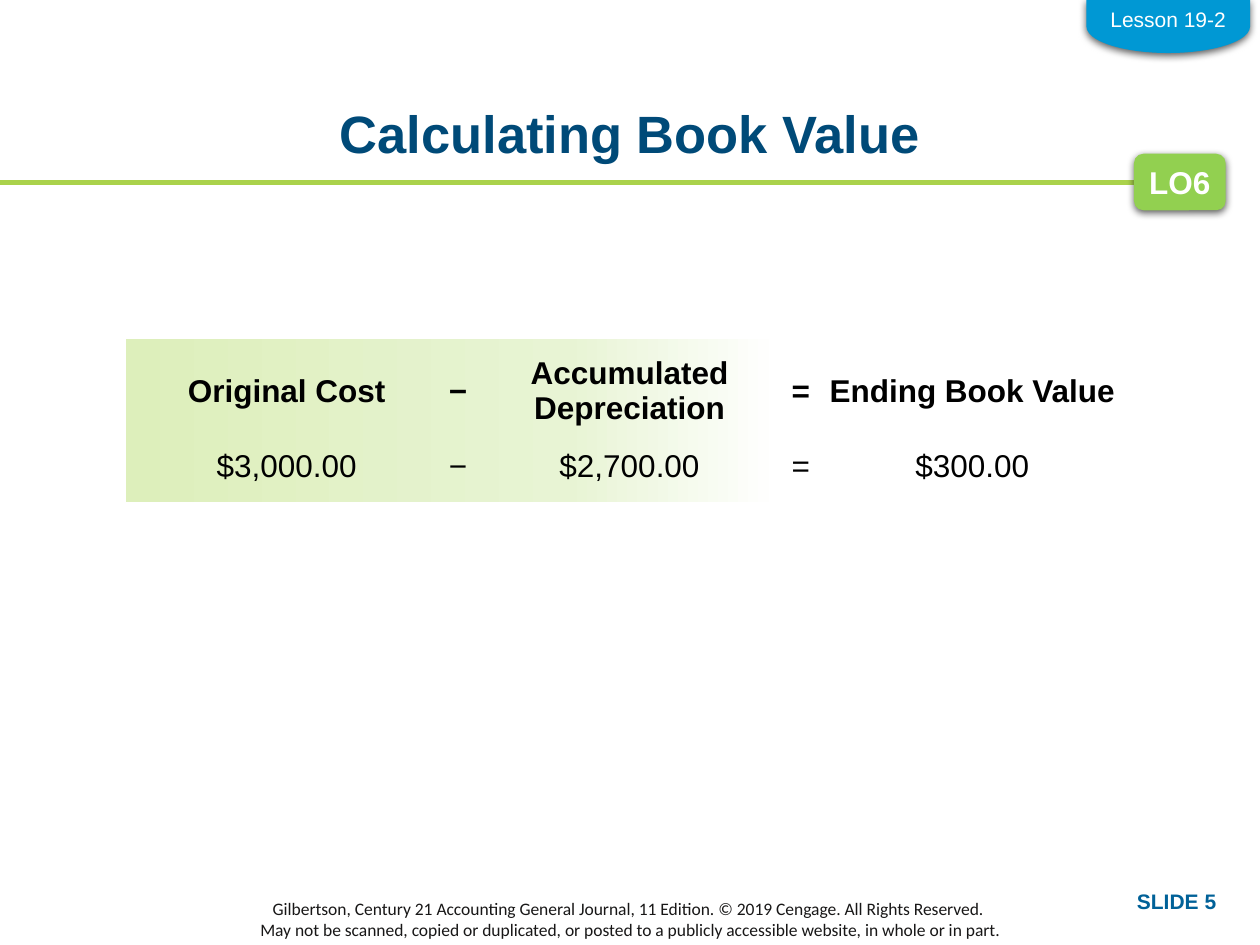
from collections import namedtuple
from dataclasses import dataclass

from lxml import etree
from pptx import Presentation
from pptx import util as u
from pptx.dml.color import RGBColor
from pptx.enum import shapes, text
from pptx.oxml import ns, parse_xml

Box = namedtuple("Box", "left top width height")
PLAIN_TABLE = "{2D5ABB26-0587-4C30-8999-92F81FD0307C}"
ALIGN, ANCHOR = text.PP_ALIGN, text.MSO_ANCHOR


@dataclass(frozen=True)
class Theme:
    font: str = "Arial"
    footer_font: str = "Calibri"
    title: str = "004A78"
    rule: str = "AAD24B"
    badge: str = "92D050"
    tab: str = "0098D4"
    number: str = "006198"
    footer: str = "181717"
    ink: str = "000000"
    white: str = "FFFFFF"
    band: tuple = ((0, "DDEFBB"), (50, "E8F4D4"), (74, "FFFFFF"))
    title_size: int = 30
    body_size: int = 18
    label_size: int = 12
    footer_size: int = 10


THEME = Theme()


def lengths(box):
    return [u.Cm(value) for value in box]


def write(frame, lines, size=THEME.body_size, color=THEME.ink, bold=False,
          font=THEME.font, align=ALIGN.CENTER, anchor=ANCHOR.TOP,
          wrap=True, spacing=None):
    frame.word_wrap = wrap
    frame.vertical_anchor = anchor
    for index, line in enumerate(lines):
        paragraph = frame.paragraphs[0] if index == 0 else frame.add_paragraph()
        paragraph.text = line
        paragraph.alignment = align
        paragraph.line_spacing = spacing
        for run in paragraph.runs:
            run.font.name, run.font.size, run.font.bold = font, u.Pt(size), bold
            run.font.color.rgb = RGBColor.from_string(color)


def add_label(slide, box, lines, **style):
    label = slide.shapes.add_textbox(*lengths(box))
    write(label.text_frame, lines, **style)


def add_block(slide, kind, box, color):
    block = slide.shapes.add_shape(kind, *lengths(box))
    block.shadow.inherit = False
    block.fill.solid()
    block.fill.fore_color.rgb = RGBColor.from_string(color)
    block.line.fill.background()
    return block


def cast_shadow(block):
    effects = block._element.spPr.find(ns.qn("a:effectLst"))
    effects.append(parse_xml(
        f'<a:outerShdw {ns.nsdecls("a")} blurRad="{u.Pt(4.5)}" dist="{u.Pt(1.5)}" '
        f'dir="5400000" rotWithShape="0"><a:srgbClr val="{THEME.ink}">'
        '<a:alpha val="63000"/></a:srgbClr></a:outerShdw>'))


def fade(block, stops):
    """Replace the solid fill by a left-to-right gradient."""
    gradient = etree.Element(ns.qn("a:gradFill"), rotWithShape="1")
    stop_list = etree.SubElement(gradient, ns.qn("a:gsLst"))
    for percent, color in stops:
        stop = etree.SubElement(stop_list, ns.qn("a:gs"), pos=str(percent * 1000))
        etree.SubElement(stop, ns.qn("a:srgbClr"), val=color)
    etree.SubElement(gradient, ns.qn("a:lin"), ang="0", scaled="0")
    properties = block._element.spPr
    properties.replace(properties.find(ns.qn("a:solidFill")), gradient)


def heading(slide, box):
    """Title, rule below it and the objective badge at the end of the rule."""
    rule_y = box.top + 1.5
    rule = slide.shapes.add_connector(
        shapes.MSO_CONNECTOR.STRAIGHT,
        *lengths((box.left, rule_y, box.left + 24.13, rule_y)))
    rule.line.color.rgb = RGBColor.from_string(THEME.rule)
    rule.line.width = u.Pt(3)
    etree.SubElement(rule._element.spPr, ns.qn("a:effectLst"))

    title = slide.shapes.title
    title.left, title.top, title.width, title.height = lengths(
        (box.left + 1.75, box.top, box.width - 3.5, box.height))
    frame = title.text_frame
    frame.margin_left = frame.margin_right = 0
    frame.margin_top = frame.margin_bottom = 0
    write(frame, ["Calculating Book Value"], size=THEME.title_size,
          color=THEME.title, bold=True, spacing=0.9)

    badge = add_block(slide, shapes.MSO_SHAPE.ROUNDED_RECTANGLE,
                      Box(box.left + 22.86, rule_y - 0.58, 1.85, 1.14), THEME.badge)
    cast_shadow(badge)
    write(badge.text_frame, ["LO6"], color=THEME.white, bold=True,
          anchor=ANCHOR.MIDDLE, wrap=False)


def equation_row(slide, box, terms, bold):
    table_frame = slide.shapes.add_table(1, len(terms), *lengths(box))
    table = table_frame.table
    table.first_row = table.horz_banding = False
    table._tbl.tblPr.find(ns.qn("a:tableStyleId")).text = PLAIN_TABLE
    table.rows[0].height = u.Cm(box.height)
    operator_width = 0.43
    term_width = (box.width - 2 * operator_width) / 3
    for index, term in enumerate(terms):
        table.columns[index].width = u.Cm(operator_width if index % 2 else term_width)
        cell = table.cell(0, index)
        cell.fill.background()
        cell.margin_left = cell.margin_right = cell.margin_top = u.Cm(0.03)
        cell.margin_bottom = 0
        write(cell.text_frame, [term], bold=bold)
        cell.vertical_anchor = ANCHOR.MIDDLE


def book_value(slide, box):
    """Equation in words and in figures over a fading band."""
    band = add_block(slide, shapes.MSO_SHAPE.RECTANGLE,
                     box._replace(width=17.78), THEME.white)
    fade(band, THEME.band)
    top = box.top + 0.15
    rows = (
        (1.78, True, ("Original Cost", "−", "Accumulated\nDepreciation", "=",
                      "Ending Book Value")),
        (1.27, False, ("$3,000.00", "−", "$2,700.00", "=", "$300.00")),
    )
    for height, bold, terms in rows:
        equation_row(slide, Box(box.left, top, box.width, height), terms, bold)
        top += height


def lesson_tab(slide, box):
    """Rounded tab hanging from the top edge: a delay shape turned by 90°."""
    turned = Box(box.left + (box.width - box.height) / 2,
                 box.top + (box.height - box.width) / 2, box.height, box.width)
    tab = add_block(slide, shapes.MSO_SHAPE.FLOWCHART_DELAY, turned, THEME.tab)
    tab.rotation = 90
    cast_shadow(tab)
    add_label(slide, box._replace(height=0.76), ["Lesson 19-2"],
              size=THEME.label_size, color=THEME.white, wrap=False)


def footer(slide, box):
    add_label(slide, Box(box.left, box.top + 0.36, box.width, 0.76), [
        "Gilbertson, Century 21 Accounting General Journal, 11 Edition. "
        "© 2019 Cengage. All Rights Reserved. ",
        "May not be scanned, copied or duplicated, or posted to a publicly "
        "accessible website, in whole or in part."],
        size=THEME.footer_size, color=THEME.footer, font=THEME.footer_font,
        anchor=ANCHOR.MIDDLE)
    add_label(slide, Box(box.left + 19.69, box.top, 5.08, 0.76), ["SLIDE 5"],
              size=THEME.label_size, color=THEME.number, bold=True, align=ALIGN.RIGHT)


def main():
    deck = Presentation()
    deck.slide_width, deck.slide_height = u.Cm(25.4), u.Cm(19.05)
    slide = deck.slides.add_slide(deck.slide_layouts[5])
    heading(slide, Box(0, 2.18, 25.4, 1.88))
    book_value(slide, Box(2.54, 6.83, 20.3, 3.3))
    footer(slide, Box(0, 17.78, 25.4, 1.27))
    lesson_tab(slide, Box(21.9, 0, 3.3, 1.07))
    deck.save("out.pptx")


if __name__ == "__main__":
    main()
